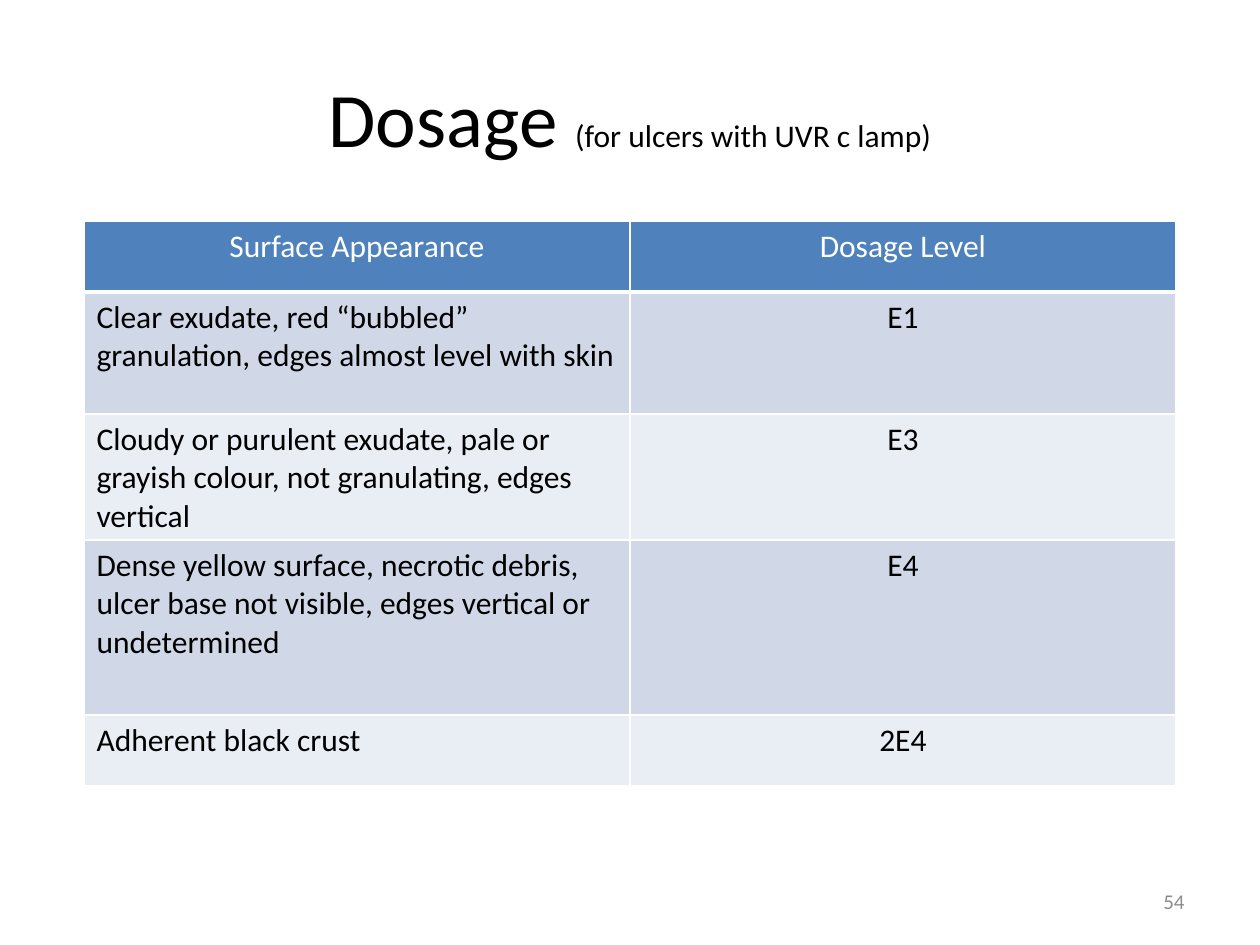
from dataclasses import dataclass

from lxml.etree import SubElement
from pptx import Presentation
from pptx.dml.color import RGBColor
from pptx.enum.text import MSO_ANCHOR as Anchor, PP_ALIGN as Align
from pptx.oxml.ns import qn
from pptx.util import Emu, Pt

# Content
TITLE = [("Dosage ", "title"), ("(for ulcers with UVR c lamp)", "body")]
HEADER = ("Surface Appearance", "Dosage Level")
LEVELS = [
    ("Clear exudate, red “bubbled” granulation, edges almost level with skin", "E1"),
    ("Cloudy or purulent exudate, pale or grayish colour, not granulating, edges vertical", "E3"),
    ("Dense yellow surface, necrotic debris, ulcer base not visible, "
     "edges vertical or undetermined", "E4"),
    ("Adherent black crust", "2E4"),
]
PAGE_NUMBER = [("54", "small")]

# Places in px: left, top, width, height
PAGE = (1260, 945)
TITLE_AT = (63, 38, 1134, 157)
TABLE_AT = (84, 221, 1092, 566)
NUMBER_AT = (903, 876, 294, 50)
ROW_HEIGHTS = (71, 122, 122, 175, 71)


@dataclass(frozen=True)
class Theme:
    font: str = "Calibri"
    ink: str = "000000"
    paper: str = "FFFFFF"
    muted: str = "8C8C8C"
    header: str = "4F81BD"
    bands: tuple = ("D0D8E8", "E9EDF4")
    title: int = 44
    body: int = 18
    small: int = 12


THEME = Theme()


def px(value):
    return Emu(round(value * 914400 / 126))


def write(frame, spans, color=THEME.ink, align=Align.LEFT):
    para = frame.paragraphs[0]
    para.alignment = align
    for text, size in spans:
        span = para.add_run()
        span.text = text
        span.font.name = THEME.font
        span.font.size = Pt(getattr(THEME, size))
        span.font.bold = False
        span.font.color.rgb = RGBColor.from_string(color)


def add_text(page, place, spans, **style):
    box = page.shapes.add_textbox(*map(px, place))
    box.text_frame.word_wrap = True
    box.text_frame.vertical_anchor = Anchor.MIDDLE
    write(box.text_frame, spans, **style)


def add_borders(cell, bottom=1):
    properties = cell._tc.get_or_add_tcPr()
    for side, width in (("L", 1), ("R", 1), ("T", 1), ("B", bottom)):
        line = SubElement(properties, qn(f"a:ln{side}"), w=str(Pt(width)))
        fill = SubElement(line, qn("a:solidFill"))
        SubElement(fill, qn("a:srgbClr"), val=THEME.paper)


def add_dosage_table(page):
    rows = [HEADER, *LEVELS]
    table = page.shapes.add_table(len(rows), len(HEADER), *map(px, TABLE_AT)).table
    for column in table.columns:
        column.width = px(TABLE_AT[2] / len(HEADER))
    for r, (texts, height) in enumerate(zip(rows, ROW_HEIGHTS)):
        table.rows[r].height = px(height)
        is_header = r == 0
        fill = THEME.header if is_header else THEME.bands[(r - 1) % 2]
        for c, text in enumerate(texts):
            cell = table.cell(r, c)
            add_borders(cell, bottom=3 if is_header else 1)
            cell.fill.solid()
            cell.fill.fore_color.rgb = RGBColor.from_string(fill)
            write(cell.text_frame, [(text, "body")],
                  color=THEME.paper if is_header else THEME.ink,
                  align=Align.CENTER if is_header or c else Align.LEFT)


def main():
    deck = Presentation()
    deck.slide_width, deck.slide_height = map(px, PAGE)
    page = deck.slides.add_slide(deck.slide_layouts[6])
    add_text(page, TITLE_AT, TITLE, align=Align.CENTER)
    add_dosage_table(page)
    add_text(page, NUMBER_AT, PAGE_NUMBER, color=THEME.muted, align=Align.RIGHT)
    deck.save("out.pptx")


if __name__ == "__main__":
    main()
